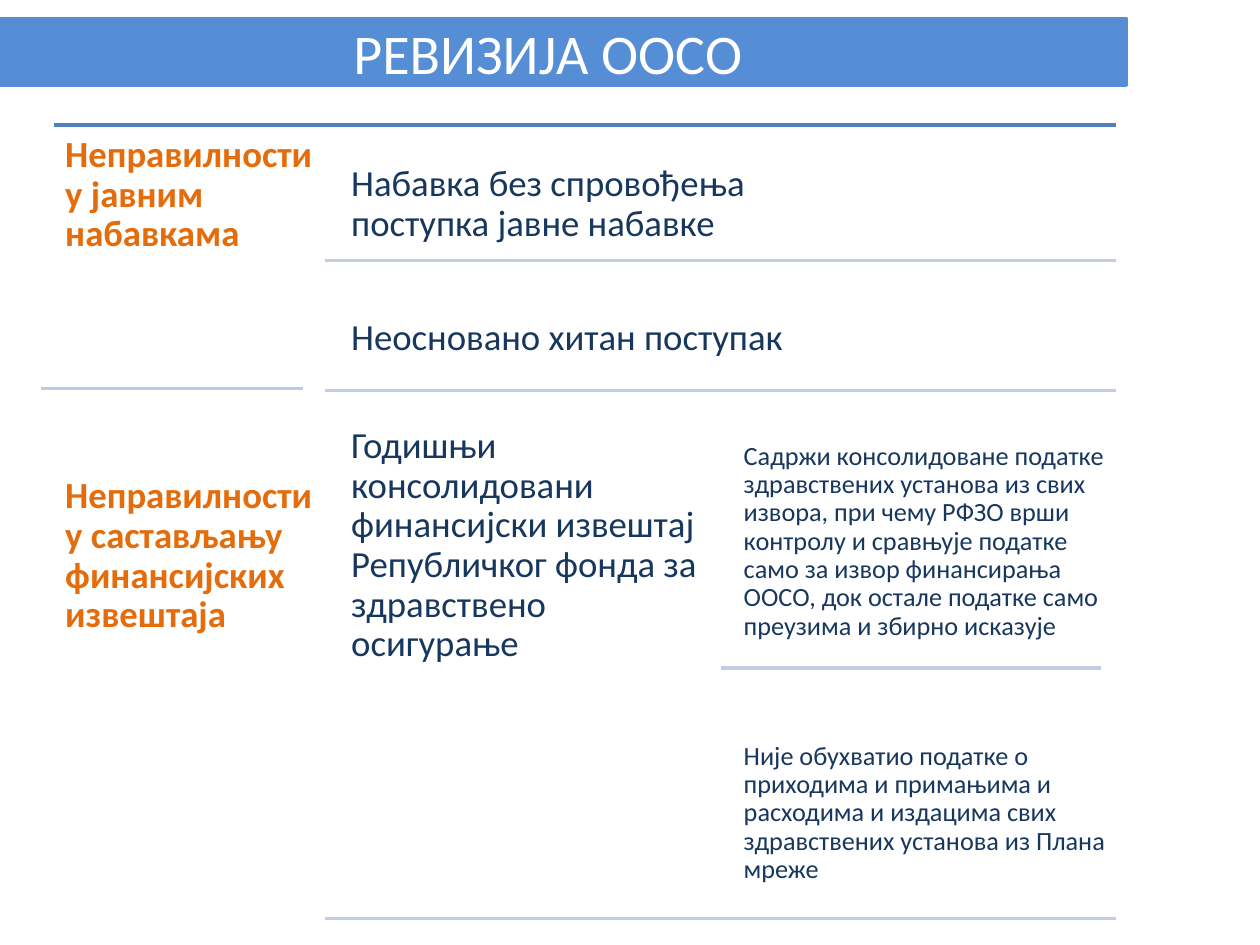
from pptx import Presentation
from pptx.dml.color import RGBColor
from pptx.enum.shapes import MSO_CONNECTOR, MSO_SHAPE
from pptx.enum.text import MSO_ANCHOR, MSO_AUTO_SIZE, PP_ALIGN
from pptx.oxml.ns import qn
from pptx.util import Pt
from lxml import etree

COLORS = {
    "banner": "558ED5", "white": "FFFFFF", "heading": "E46C0A", "body": "17375E",
    "top_rule": "4F81BD", "rule": "C2CDE1", "left_rule": "B9CDE5",
}
FONT = "Calibri"


def color(name):
    return RGBColor.from_string(COLORS[name])


def add_text(s, box, paragraphs, size, inset, anchor, name, bold=False, top=None, gap=0):
    sp = s.shapes.add_textbox(*[Pt(v) for v in box])
    tf = sp.text_frame
    tf.word_wrap = True
    tf.vertical_anchor = anchor
    tf.margin_left = tf.margin_right = tf.margin_bottom = Pt(inset)
    tf.margin_top = Pt(top or inset)
    for i, text in enumerate(paragraphs):
        p = tf.add_paragraph() if i else tf.paragraphs[0]
        p.line_spacing = 0.9
        if i:
            p.space_before = Pt(gap)
        r = p.add_run()
        r.text = text
        r.font.name, r.font.size, r.font.bold = FONT, Pt(size), bold
        r.font.color.rgb = color(name)


prs = Presentation()
prs.slide_width, prs.slide_height = Pt(720), Pt(540)
s = prs.slides.add_slide(prs.slide_layouts[5])

# Banner behind the title
banner = s.shapes.add_shape(MSO_SHAPE.RECTANGLE, Pt(0), Pt(10.8), Pt(643.7), Pt(38.2))
banner.shadow.inherit = False
banner.fill.solid()
banner.fill.fore_color.rgb = color("banner")
banner.line.color.rgb = color("banner")
banner.line.width = Pt(2)
title = s.shapes.title
title.element.addprevious(banner.element)

# Title
title.left, title.top, title.width, title.height = Pt(0), Pt(10.8), Pt(626.4), Pt(37.4)
tf = title.text_frame
tf.auto_size = MSO_AUTO_SIZE.NONE
tf.vertical_anchor = MSO_ANCHOR.MIDDLE
p = tf.paragraphs[0]
p.alignment = PP_ALIGN.CENTER
r = p.add_run()
r.text = "РЕВИЗИЈА ООСО"
r.font.name, r.font.size = FONT, Pt(32)
r.font.color.rgb = color("white")

# Rules: x1, x2, y, colour, width
rules = [
    (31, 638, 71.3, "top_rule", 2),
    (186, 638, 149, "rule", 2),
    (186, 638, 223.2, "rule", 2),
    (412, 629, 381.6, "rule", 2),
    (186, 638, 524.9, "rule", 2),
    (173, 23.5, 222, "left_rule", 2.25),
]
for x1, x2, y, name, width in rules:
    line = s.shapes.add_connector(MSO_CONNECTOR.STRAIGHT, Pt(x1), Pt(y), Pt(x2), Pt(y))
    line.line.color.rgb = color(name)
    line.line.width = Pt(width)
    etree.SubElement(line.element.spPr, qn("a:effectLst"))

# Headings in the left column
add_text(s, (31, 71.3, 155, 468.7),
         ["Неправилности у јавним набавкама",
          "Неправилности у састављању финансијских извештаја"],
         21, 6.3, MSO_ANCHOR.TOP, "heading", bold=True, gap=127)

# Findings in the middle column
findings = [
    ((194.4, 85.7, 319, 62.6), MSO_ANCHOR.MIDDLE,
     "Набавка без спровођења поступка јавне набавке"),
    ((194.4, 163.4, 422.6, 60.5), MSO_ANCHOR.MIDDLE, "Неосновано хитан поступак"),
    ((194.4, 237.6, 217.4, 287.3), MSO_ANCHOR.TOP,
     "Годишњи консолидовани финансијски извештај Републичког фонда за "
     "здравствено осигурање"),
]
for box, anchor, text in findings:
    add_text(s, box, [text], 21, 6.3, anchor, "body")

# Details in the right column
details = [
    (237.6, 4.5,
     "Садржи консолидоване податке здравствених установа из свих извора, при чему "
     "РФЗО врши контролу и сравњује податке само за извор финансирања ООСО, док "
     "остале податке само преузима и збирно исказује"),
    (381.6, 27,
     "Није обухватио податке о приходима и примањима и расходима и издацима свих "
     "здравствених установа из Плана мреже"),
]
for y, top, text in details:
    add_text(s, (420.5, y, 217.4, 144), [text], 15, 4.5, MSO_ANCHOR.MIDDLE, "body", top=top)

prs.save("out.pptx")
